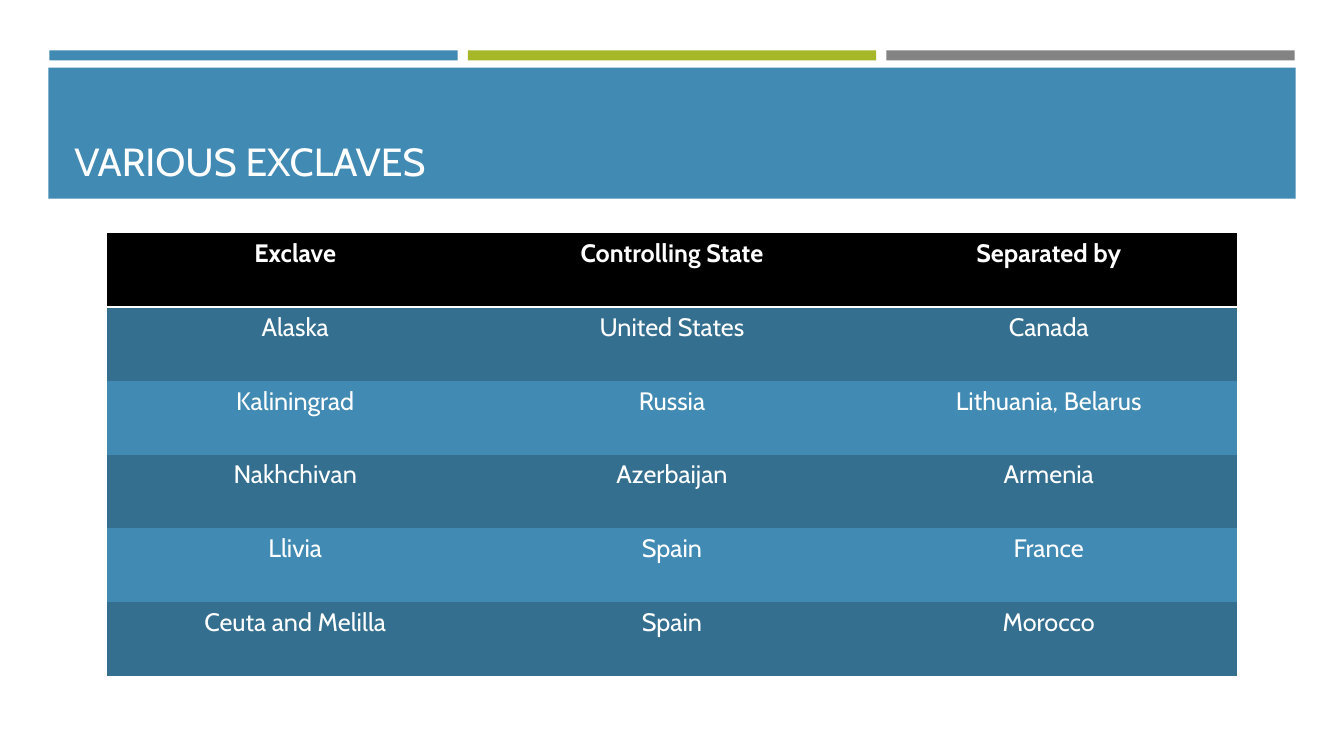
from pptx import Presentation
from pptx import util as u
from pptx.dml.color import RGBColor
from pptx.enum import shapes, text
from pptx.oxml import parse_xml
from pptx.oxml.ns import nsdecls, qn

FONT = "Cabin"
HUES = {
    "blue": "418AB3",
    "deep": "346F8F",
    "green": "A6B727",
    "gray": "838383",
    "black": "000000",
    "white": "FFFFFF",
}
ROWS = [
    ("Exclave", "Controlling State", "Separated by"),
    ("Alaska", "United States", "Canada"),
    ("Kaliningrad", "Russia", "Lithuania, Belarus"),
    ("Nakhchivan", "Azerbaijan", "Armenia"),
    ("Llivia", "Spain", "France"),
    ("Ceuta and Melilla", "Spain", "Morocco"),
]


def add_bar(left, top, width, height, hue):
    bar = slide.shapes.add_shape(
        shapes.MSO_SHAPE.RECTANGLE,
        u.Inches(left), u.Inches(top), u.Inches(width), u.Inches(height))
    bar.shadow.inherit = False
    bar.fill.solid()
    bar.fill.fore_color.rgb = RGBColor.from_string(HUES[hue])
    bar.line.fill.background()


def set_text(para, words, size, bold=False):
    para.text = words
    para.font.name = FONT
    para.font.size = u.Pt(size)
    para.font.bold = bold
    para.font.color.rgb = RGBColor.from_string(HUES["white"])


deck = Presentation()
deck.slide_width = u.Inches(13.33)
deck.slide_height = u.Inches(7.5)
slide = deck.slides.add_slide(deck.slide_layouts[6])

for i, hue in enumerate(("blue", "green", "gray")):
    add_bar(0.49 + i * 4.15, 0.5, 4.05, 0.1, hue)
add_bar(0.48, 0.67, 12.37, 1.3, "blue")

title = slide.shapes.add_textbox(
    u.Inches(0.64), u.Inches(0.77), u.Inches(12.06), u.Inches(1.11))
title.text_frame.word_wrap = True
title.text_frame.vertical_anchor = text.MSO_ANCHOR.BOTTOM
set_text(title.text_frame.paragraphs[0], "VARIOUS EXCLAVES", 28)

frame = slide.shapes.add_table(
    len(ROWS), len(ROWS[0]),
    u.Inches(1.06), u.Inches(2.31), u.Inches(11.21), u.Inches(4.4))
style = frame._element.find(".//" + qn("a:tableStyleId"))
style.text = "{2D5ABB26-0587-4C30-8999-92F81FD0307C}"

for r, row in enumerate(ROWS):
    head = r == 0
    hue = "black" if head else ("blue", "deep")[r % 2]
    for c, words in enumerate(row):
        cell = frame.table.cell(r, c)
        para = cell.text_frame.paragraphs[0]
        set_text(para, words, 18, head)
        para.alignment = text.PP_ALIGN.CENTER
        cell.fill.solid()
        cell.fill.fore_color.rgb = RGBColor.from_string(HUES[hue])
        if head:
            rule = parse_xml(
                f'<a:lnB {nsdecls("a")} w="{u.Pt(2)}"><a:solidFill>'
                f'<a:srgbClr val="{HUES["white"]}"/></a:solidFill></a:lnB>')
            cell._tc.get_or_add_tcPr().insert(0, rule)

deck.save("out.pptx")
